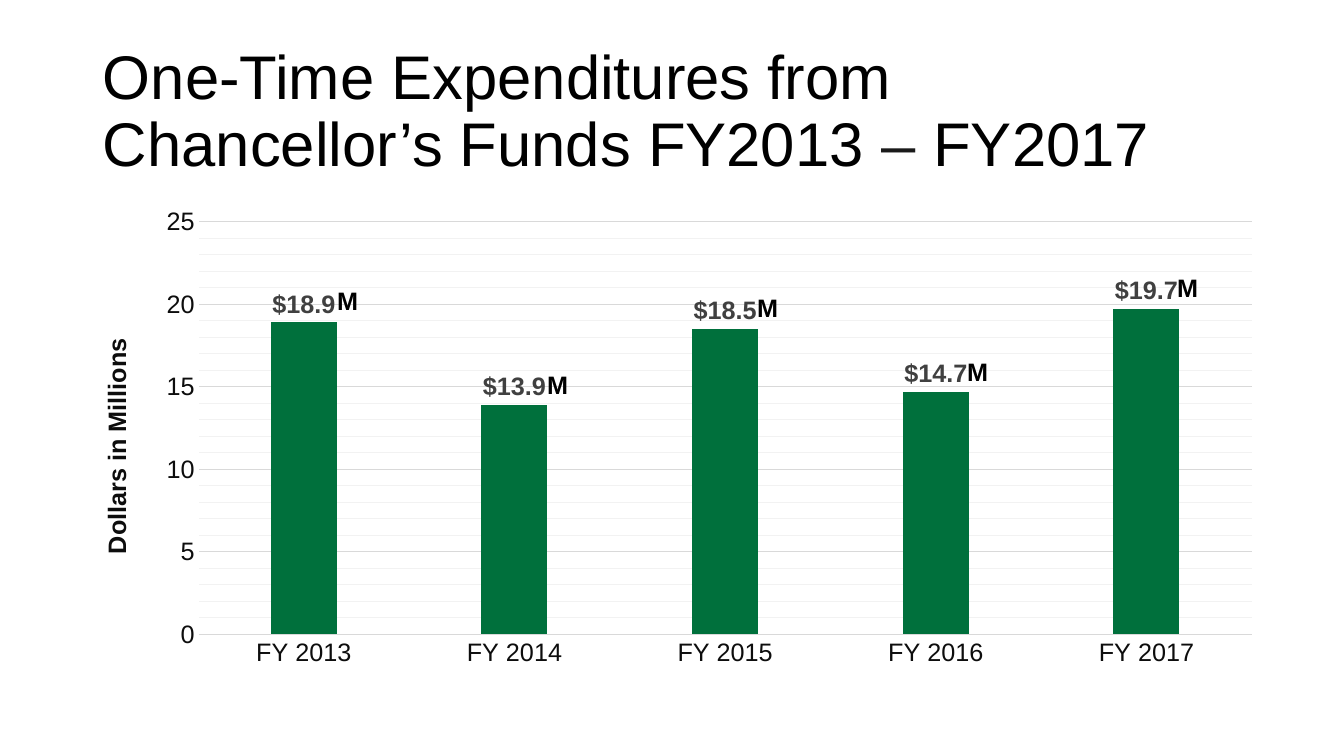
import pptx
import pptx.chart.data
import pptx.dml.color
import pptx.enum.chart
import pptx.enum.text
import pptx.oxml
import pptx.util

COLORS = {
    "black": "000000",
    "dash": "1A1A1A",
    "axis": "0D0D0D",
    "label": "404040",
    "grid": "D9D9D9",
    "minor grid": "F2F2F2",
    "bar": "00703C",
}
YEARS = range(2013, 2018)
MILLIONS = (18.9, 13.9, 18.5, 14.7, 19.7)


class ExpenditureSlide:
    """Style and drawing methods for the current slide."""

    font_name = "Arial"
    scale = 914400 / 100.8
    line_width = pptx.util.Pt(0.75)

    def __init__(self, presentation, width, height):
        presentation.slide_width = self.px(width)
        presentation.slide_height = self.px(height)
        self.slide = presentation.slides.add_slide(presentation.slide_layouts[6])

    def px(self, length):
        return pptx.util.Emu(round(length * self.scale))

    def color(self, name):
        return pptx.dml.color.RGBColor.from_string(COLORS[name])

    def set_format(self, target, values):
        for name, value in values.items():
            setattr(target, name, value)

    def style_font(self, font, size, color, bold=False):
        self.set_format(font, {
            "name": self.font_name, "size": pptx.util.Pt(size), "bold": bold})
        font.color.rgb = self.color(color)

    def style_line(self, line, color):
        line.width = self.line_width
        line.color.rgb = self.color(color)

    def style_minor_gridlines(self, axis, color):
        gridlines = axis._element.find(pptx.oxml.ns.qn("c:minorGridlines"))
        gridlines.append(pptx.oxml.parse_xml(
            f'<c:spPr {pptx.oxml.ns.nsdecls("c", "a")}><a:ln w="{self.line_width}">'
            f'<a:solidFill><a:srgbClr val="{COLORS[color]}"/></a:solidFill>'
            "</a:ln></c:spPr>"))

    def add_text(self, box, runs, size, frame_format, paragraph_format, bold=False):
        shape = self.slide.shapes.add_textbox(*map(self.px, box))
        self.set_format(shape.text_frame, frame_format)
        paragraph = shape.text_frame.paragraphs[0]
        self.set_format(paragraph, paragraph_format)
        for text, color in runs:
            run = paragraph.add_run()
            run.text = text
            self.style_font(run.font, size, color, bold)

    def place(self, parent, index, **fractions):
        """Give a chart part a manual layout in fractions of the chart."""
        for layout in parent.findall(pptx.oxml.ns.qn("c:layout")):
            parent.remove(layout)
        target = '<c:layoutTarget val="inner"/>' if "w" in fractions else ""
        modes = "".join(f'<c:{key}Mode val="edge"/>' for key in "xy")
        values = "".join(f'<c:{key} val="{value}"/>' for key, value in fractions.items())
        parent.insert(index, pptx.oxml.parse_xml(
            f'<c:layout {pptx.oxml.ns.nsdecls("c")}><c:manualLayout>'
            f"{target}{modes}{values}</c:manualLayout></c:layout>"))

    def add_column_chart(self, box, categories, values, axis_title):
        data = pptx.chart.data.CategoryChartData()
        data.categories = categories
        data.add_series("Series 1", values)
        chart = self.slide.shapes.add_chart(
            pptx.enum.chart.XL_CHART_TYPE.COLUMN_CLUSTERED,
            *map(self.px, box), data).chart
        self.set_format(chart, {"has_legend": False, "has_title": False})
        self.style_font(chart.font, 10, "black")
        self.place(chart.plots[0]._element.getparent(), 0,
                   x=0.104, y=0.041, w=0.88, h=0.86)

        # Columns and value labels
        plot = chart.plots[0]
        self.set_format(plot, {"gap_width": 219, "overlap": -100,
                               "vary_by_categories": False, "has_data_labels": True})
        fill = plot.series[0].format.fill
        fill.solid()
        fill.fore_color.rgb = self.color("bar")
        self.set_format(plot.data_labels, {
            "show_value": True,
            "number_format": '"$"#,##0.0',
            "number_format_is_linked": False,
            "position": pptx.enum.chart.XL_LABEL_POSITION.OUTSIDE_END,
        })
        self.style_font(plot.data_labels.font, 18, "label", bold=True)

        # Axes and gridlines
        no_tick = pptx.enum.chart.XL_TICK_MARK.NONE
        for axis in (chart.category_axis, chart.value_axis):
            self.set_format(axis, {"major_tick_mark": no_tick, "minor_tick_mark": no_tick})
            self.style_font(axis.tick_labels.font, 18, "axis")
        self.style_line(chart.category_axis.format.line, "grid")
        value_axis = chart.value_axis
        self.set_format(value_axis, {
            "minimum_scale": 0, "maximum_scale": 25, "major_unit": 5, "minor_unit": 1,
            "has_major_gridlines": True, "has_minor_gridlines": True})
        value_axis.format.line.fill.background()
        self.style_line(value_axis.major_gridlines.format.line, "grid")
        self.style_minor_gridlines(value_axis, "minor grid")

        # Value axis title
        title = value_axis.axis_title
        run = title.text_frame.paragraphs[0].add_run()
        run.text = axis_title
        self.style_font(run.font, 18, "axis", bold=True)
        title.text_frame._txBody.bodyPr.set("rot", "-5400000")
        title.text_frame._txBody.bodyPr.set("vert", "horz")
        self.place(title._element, 1, x=0.018, y=0.275)


def main():
    presentation = pptx.Presentation()
    page = ExpenditureSlide(presentation, 1344, 756)

    # Title
    page.add_text(
        (93, 40, 1132, 146),
        [("One-Time Expenditures from Chancellor’s Funds FY2013", "black"),
         (" – ", "dash"), ("FY2017", "black")],
        44,
        {"word_wrap": True, "vertical_anchor": pptx.enum.text.MSO_ANCHOR.MIDDLE},
        {"line_spacing": 0.9})

    # Chart
    page.add_column_chart((74, 202, 1197, 480), [f"FY {year}" for year in YEARS],
                          MILLIONS, "Dollars in Millions")

    # Unit marks beside the value labels, one per column
    for index, value in enumerate(MILLIONS):
        page.add_text(
            (327 + 210 * index, round(597 - 16.75 * value), 41, 40),
            [("M", "black")], 18,
            {"word_wrap": False,
             "auto_size": pptx.enum.text.MSO_AUTO_SIZE.SHAPE_TO_FIT_TEXT},
            {"alignment": pptx.enum.text.PP_ALIGN.RIGHT}, bold=True)

    presentation.save("out.pptx")


if __name__ == "__main__":
    main()
